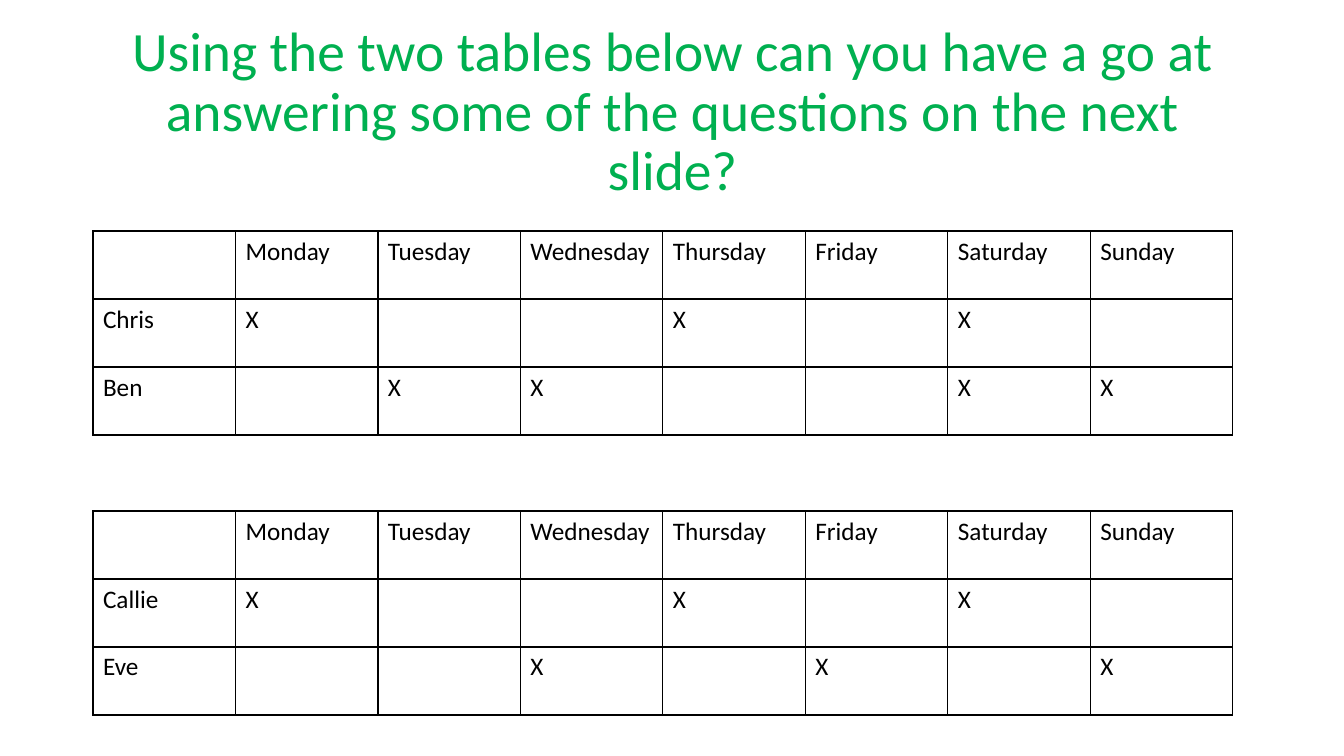
from dataclasses import dataclass

import lxml.etree
import pptx
import pptx.dml.color
import pptx.enum.text
import pptx.oxml.ns
import pptx.util


@dataclass(frozen=True)
class Theme:
    font: str = "Calibri"
    title_color: str = "00B050"
    text_color: str = "000000"
    border_color: str = "000000"
    title_size: float = 39.6
    table_size: float = 18
    border_width: float = 1


class SlideBuilder:
    EMU_PER_PX = 914400 / 100.8

    def __init__(self, slide, theme):
        self.slide = slide
        self.theme = theme

    @classmethod
    def px(cls, length):
        return pptx.util.Emu(round(length * cls.EMU_PER_PX))

    def style(self, paragraph, size, color):
        paragraph.font.name = self.theme.font
        paragraph.font.size = pptx.util.Pt(size)
        paragraph.font.color.rgb = pptx.dml.color.RGBColor.from_string(color)

    def title(self, text, left, top, width, height):
        shape = self.slide.shapes.add_textbox(*map(self.px, (left, top, width, height)))
        frame = shape.text_frame
        frame.word_wrap = True
        frame.vertical_anchor = pptx.enum.text.MSO_ANCHOR.MIDDLE
        paragraph = frame.paragraphs[0]
        paragraph.text = text
        paragraph.alignment = pptx.enum.text.PP_ALIGN.CENTER
        paragraph.line_spacing = 0.9
        self.style(paragraph, self.theme.title_size, self.theme.title_color)

    def borders(self, cell):
        properties = cell._tc.get_or_add_tcPr()
        qn = pptx.oxml.ns.qn
        for position, side in enumerate(("a:lnL", "a:lnR", "a:lnT", "a:lnB")):
            line = lxml.etree.Element(qn(side), w=str(pptx.util.Pt(self.theme.border_width)))
            fill = lxml.etree.SubElement(line, qn("a:solidFill"))
            lxml.etree.SubElement(fill, qn("a:srgbClr"), val=self.theme.border_color)
            properties.insert(position, line)

    def table(self, rows, left, top, width, row_height):
        shape = self.slide.shapes.add_table(
            len(rows), len(rows[0]),
            *map(self.px, (left, top, width, row_height * len(rows))),
        )
        table = shape.table
        table.first_row = False
        table.horz_banding = False
        for row_index, row in enumerate(rows):
            for column_index, text in enumerate(row):
                cell = table.cell(row_index, column_index)
                cell.text = text
                cell.fill.background()
                self.style(cell.text_frame.paragraphs[0], self.theme.table_size, self.theme.text_color)
                self.borders(cell)


DAYS = ["Monday", "Tuesday", "Wednesday", "Thursday", "Friday", "Saturday", "Sunday"]
TITLE = "Using the two tables below can you have a go at answering some of the questions on the next slide?"
TIMETABLES = [
    (231, {
        "Chris": {"Monday", "Thursday", "Saturday"},
        "Ben": {"Tuesday", "Wednesday", "Saturday", "Sunday"},
    }),
    (511, {
        "Callie": {"Monday", "Thursday", "Saturday"},
        "Eve": {"Wednesday", "Friday", "Sunday"},
    }),
]


def main():
    presentation = pptx.Presentation()
    presentation.slide_width = SlideBuilder.px(1344)
    presentation.slide_height = SlideBuilder.px(756)
    slide = presentation.slides.add_slide(presentation.slide_layouts[6])
    builder = SlideBuilder(slide, Theme())
    builder.title(TITLE, 93, 40, 1159, 146)
    for top, people in TIMETABLES:
        rows = [["", *DAYS]]
        for name, marked_days in people.items():
            rows.append([name, *("X" if day in marked_days else "" for day in DAYS)])
        builder.table(rows, 93, top, 1140, 68)
    presentation.save("out.pptx")


if __name__ == "__main__":
    main()
